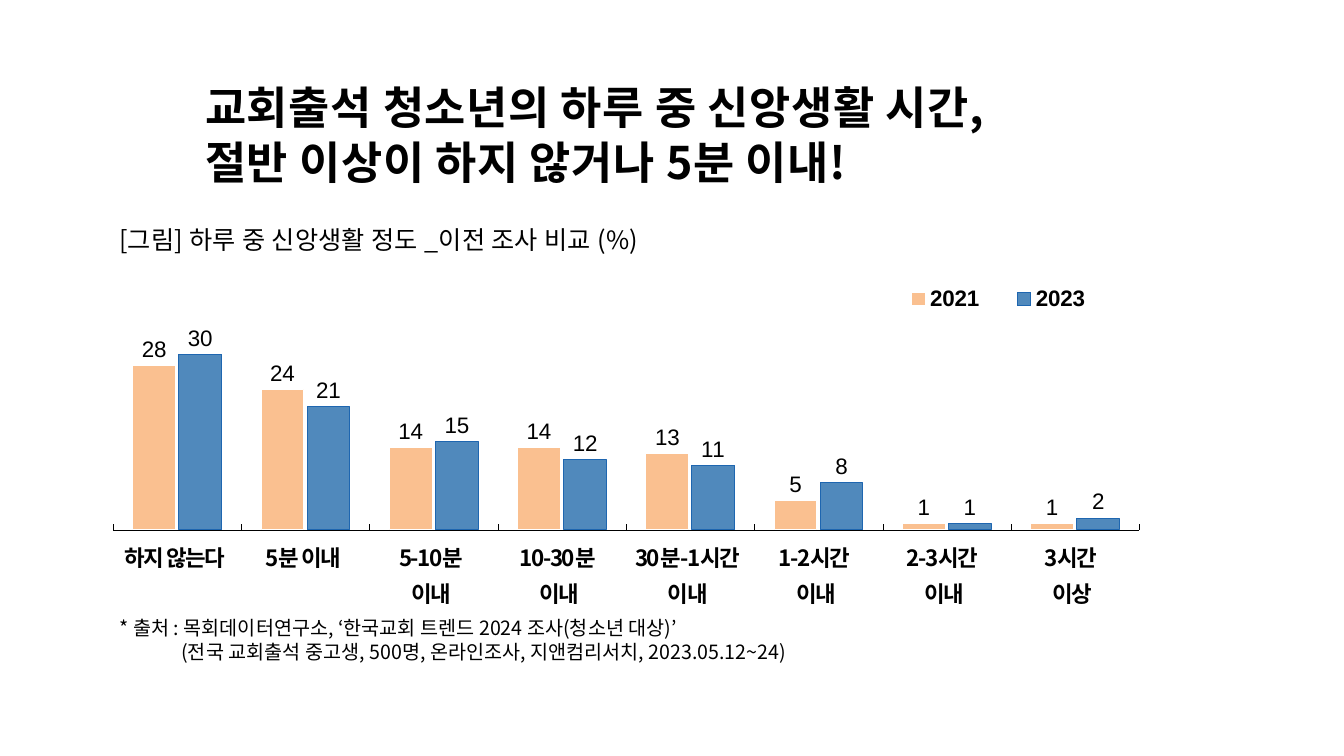
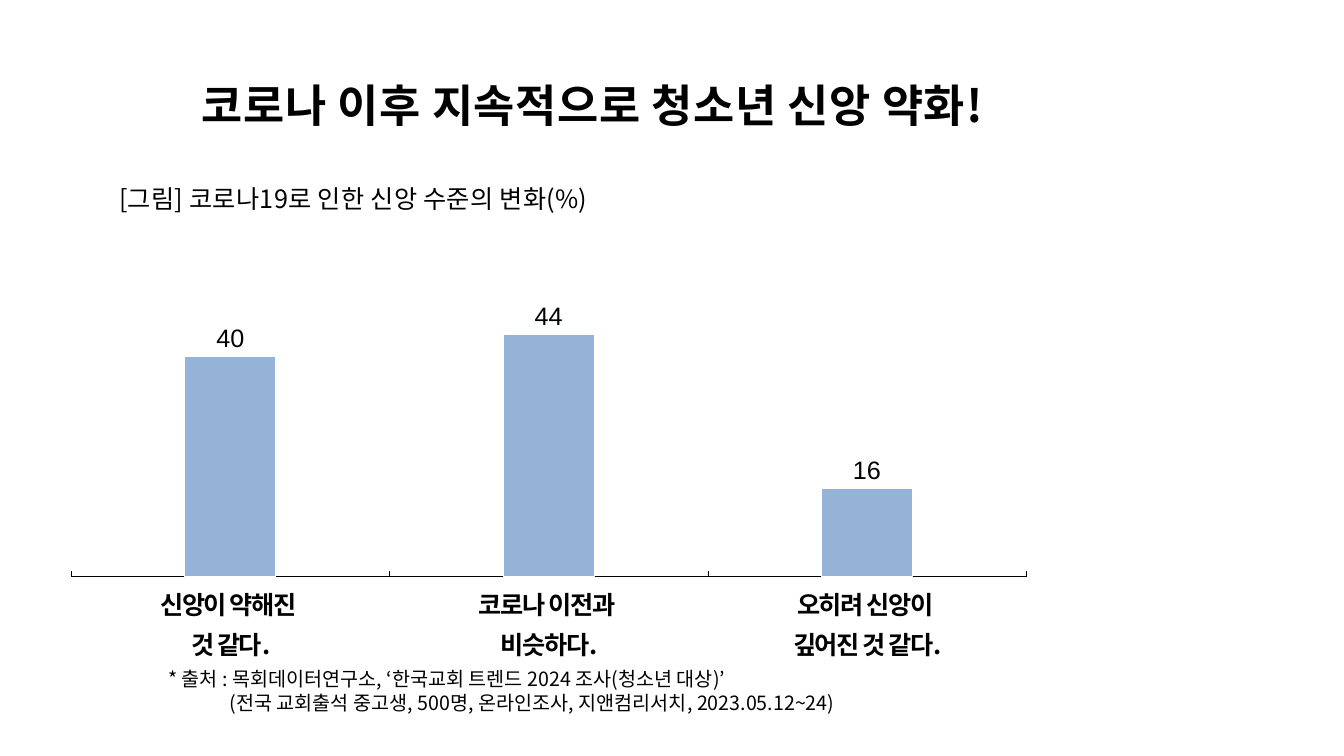
from dataclasses import dataclass

from lxml.etree import SubElement
from pptx import Presentation
from pptx.chart.data import CategoryChartData
from pptx.dml.color import RGBColor as RGB
from pptx.enum.chart import XL_CHART_TYPE as ChartType
from pptx.enum.chart import XL_LABEL_POSITION as LabelPos
from pptx.enum.chart import XL_LEGEND_POSITION as LegendPos
from pptx.enum.chart import XL_TICK_LABEL_POSITION as TickLabel
from pptx.enum.chart import XL_TICK_MARK as Tick
from pptx.enum.text import PP_ALIGN as Align
from pptx.oxml.ns import qn
from pptx.util import Pt


@dataclass(frozen=True)
class Theme:
    text_font: str = "Noto Sans CJK KR"
    chart_font: str = "Arial"
    ink: RGB = RGB(0, 0, 0)
    white: RGB = RGB(255, 255, 255)
    peach: RGB = RGB(0xFA, 0xC0, 0x90)
    blue: RGB = RGB(0x50, 0x89, 0xBC)
    blue_edge: RGB = RGB(0x1E, 0x66, 0xB0)
    pale_blue: RGB = RGB(0x95, 0xB3, 0xD7)
    title: int = 32
    caption: int = 18
    note: int = 14
    legend: int = 16
    leading: float = 1.22
    plain_table: str = "{2D5ABB26-0587-4C30-8999-92F81FD0307C}"


theme = Theme()

SOURCE_NOTE = [
    "* 출처 : 목회데이터연구소, ‘한국교회 트렌드 2024 조사(청소년 대상)’",
    "(전국 교회출석 중고생, 500명, 온라인조사, 지앤컴리서치, 2023.05.12~24)",
]

pages = [
    dict(
        title=["교회출석 청소년의 하루 중 신앙생활 시간,", "절반 이상이 하지 않거나 5분 이내!"],
        title_box=(139.5, 53, 747, 85),
        caption="[그림] 하루 중 신앙생활 정도 _이전 조사 비교 (%)",
        caption_box=(78, 156, 729, 29),
        note_box=(78.5, 436.5, 698, 41),
        chart_box=(65.5, 134, 762, 249),
        plot=(0.02, 0.142, 0.962, 0.84),
        legend=(0.74, 0.28, 0.22, 0.08),
        top=50, gap=93, overlap=-8, size=16,
        series=[
            ("2021", [28, 24, 14, 14, 13, 5, 1, 1], theme.peach, theme.white),
            ("2023", [30, 21, 15, 12, 11, 8, 1, 2], theme.blue, theme.blue_edge),
        ],
        answers_box=(79, 383, 733, 42),
        answers=[["하지 않는다"], ["5분 이내"], ["5-10분", "이내"], ["10-30분 ", "이내"],
                 ["30분-1시간", "이내"], ["1-2시간 ", "이내"], ["2-3시간 ", "이내"], ["3시간 ", "이상"]],
    ),
    dict(
        title=["코로나 이후 지속적으로 청소년 신앙 약화!"],
        title_box=(137, 51, 747, 46),
        caption="[그림] 코로나19로 인한 신앙 수준의 변화(%)",
        caption_box=(78, 127, 729, 29),
        note_box=(113, 472.5, 698, 41),
        chart_box=(36.7, 151.5, 709, 268.5),
        plot=(0.02, 0.092, 0.962, 0.878),
        legend=None,
        top=60, gap=250, overlap=-5, size=18,
        series=[("Series 1", [40, 44, 16], theme.pale_blue, theme.white)],
        answers_box=(51, 414.5, 682.5, 34),
        answers=[["신앙이 약해진 ", "것 같다."], ["코로나 이전과 ", "비슷하다."],
                 ["오히려 신앙이 ", "깊어진 것 같다."]],
    ),
]


def write_lines(frame, lines, size, bold=False, spacing=None, tracking=0, align=Align.LEFT, hang=0):
    frame.word_wrap = True
    for i, line in enumerate(lines):
        para = frame.paragraphs[0] if i == 0 else frame.add_paragraph()
        para.alignment = align
        para.line_spacing = spacing or Pt(size * theme.leading)
        if i and hang:
            para._p.get_or_add_pPr().set("marL", str(Pt(hang)))
        run = para.add_run()
        run.text = line
        run.font.name = theme.text_font
        run.font.size = Pt(size)
        run.font.bold = bold
        run.font.color.rgb = theme.ink
        props = run.font._element
        SubElement(props, qn("a:ea")).set("typeface", theme.text_font)
        if tracking:
            props.set("spc", str(tracking))


def place_inside_chart(part, index, box, inner=False):
    for old in part.findall(qn("c:layout")):
        part.remove(old)
    layout = SubElement(part, qn("c:layout"))
    part.insert(index, layout)
    manual = SubElement(layout, qn("c:manualLayout"))
    settings = [("layoutTarget", "inner")] if inner else []
    settings += [("xMode", "edge"), ("yMode", "edge"), *zip("xywh", box)]
    for tag, value in settings:
        SubElement(manual, qn(f"c:{tag}")).set("val", str(value))


deck = Presentation()
deck.slide_width, deck.slide_height = Pt(960), Pt(540)

for page in pages:
    slide = deck.slides.add_slide(deck.slide_layouts[6])
    shapes = slide.shapes

    survey = CategoryChartData()
    survey.categories = [str(n + 1) for n in range(len(page["answers"]))]
    for name, values, _, _ in page["series"]:
        survey.add_series(name, values)
    chart = shapes.add_chart(ChartType.COLUMN_CLUSTERED, *map(Pt, page["chart_box"]), survey).chart
    chart.has_title = False
    chart.font.name = theme.chart_font
    chart.font.size = Pt(page["size"])
    chart.font.color.rgb = theme.ink
    place_inside_chart(chart._chartSpace.chart.plotArea, 0, page["plot"], inner=True)

    bars = chart.plots[0]
    bars.gap_width = page["gap"]
    bars.overlap = page["overlap"]
    bars.vary_by_categories = False
    for series, (_, _, color, edge) in zip(bars.series, page["series"]):
        series.format.fill.solid()
        series.format.fill.fore_color.rgb = color
        series.format.line.color.rgb = edge
        series.format.line.width = Pt(0.75)
        labels = series.data_labels
        labels.show_value = True
        labels.position = LabelPos.OUTSIDE_END
        labels.number_format = "0"
        labels.number_format_is_linked = False
        labels.font.name = theme.chart_font
        labels.font.size = Pt(page["size"])
        labels.font.bold = False
        labels.font.color.rgb = theme.ink

    answer_axis, percent_axis = chart.category_axis, chart.value_axis
    answer_axis.tick_label_position = TickLabel.NONE
    answer_axis.major_tick_mark = Tick.INSIDE
    answer_axis.format.line.color.rgb = theme.ink
    answer_axis.format.line.width = Pt(0.25)
    percent_axis.minimum_scale, percent_axis.maximum_scale = 0, page["top"]
    percent_axis.has_major_gridlines = False
    percent_axis.tick_label_position = TickLabel.NONE
    percent_axis.format.line.fill.background()

    chart.has_legend = page["legend"] is not None
    if chart.has_legend:
        legend = chart.legend
        legend.position = LegendPos.RIGHT
        legend.include_in_layout = False
        legend.font.name = theme.chart_font
        legend.font.size = Pt(theme.legend)
        legend.font.bold = True
        legend.font.color.rgb = theme.ink
        place_inside_chart(legend._element, 1, page["legend"])

    answers = page["answers"]
    left, top, width, height = map(Pt, page["answers_box"])
    table = shapes.add_table(1, len(answers), left, top, width, height).table
    table.first_row = table.horz_banding = False
    table._tbl.tblPr.find(qn("a:tableStyleId")).text = theme.plain_table
    for cell, lines in zip(table.rows[0].cells, answers):
        cell.fill.background()
        cell.margin_left = cell.margin_right = cell.margin_top = Pt(1)
        cell.margin_bottom = 0
        write_lines(cell.text_frame, lines, page["size"], bold=True, spacing=1.1,
                    tracking=-100, align=Align.CENTER)

    for box, lines, size, bold, tracking, hang in [
        (page["caption_box"], [page["caption"]], theme.caption, False, 20, 0),
        (page["title_box"], page["title"], theme.title, True, 40, 0),
        (page["note_box"], SOURCE_NOTE, theme.note, False, 0, 44),
    ]:
        frame = shapes.add_textbox(*map(Pt, box)).text_frame
        write_lines(frame, lines, size, bold=bold, tracking=tracking, hang=hang)

deck.save("out.pptx")
